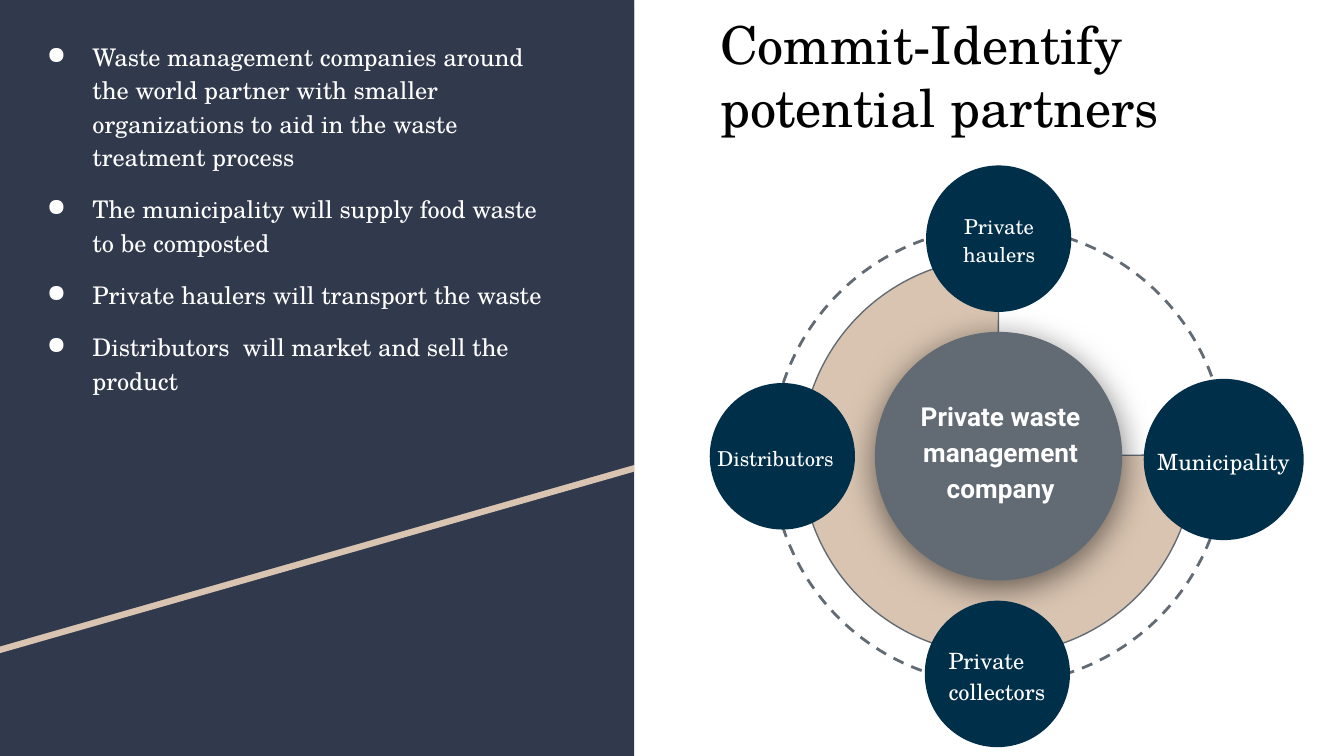
from lxml.etree import SubElement
from pptx import Presentation
from pptx.dml.color import RGBColor
from pptx.enum.dml import MSO_LINE
from pptx.enum.shapes import MSO_SHAPE
from pptx.enum.text import MSO_ANCHOR, PP_ALIGN
from pptx.oxml.ns import qn
from pptx.util import Pt

COLORS = {
    "panel": "31394D",
    "sand": "D9C4B1",
    "gray": "626B73",
    "navy": "002F4A",
    "white": "FFFFFF",
    "black": "000000",
}
SERIF = "TeX Gyre Schola"
SANS = "Roboto"


def rgb(name):
    return RGBColor.from_string(COLORS[name])


def add_text(tf, text, first=True, size=12, font=SERIF, color="white", bold=False,
             align=PP_ALIGN.LEFT, spacing=1.15, before=0, after=0, bullet=None):
    p = tf.paragraphs[0] if first else tf.add_paragraph()
    p.alignment = align
    p.line_spacing = spacing
    p.space_before, p.space_after = Pt(before), Pt(after)
    if bullet:
        pPr = p._p.get_or_add_pPr()
        pPr.set("marL", str(Pt(36)))
        pPr.set("indent", str(Pt(-24.5)))
        clr = SubElement(pPr, qn("a:buClr"))
        SubElement(clr, qn("a:srgbClr"), val=COLORS[color])
        SubElement(pPr, qn("a:buChar"), char=bullet)
    r = p.add_run()
    r.text = text
    r.font.size, r.font.name, r.font.bold = Pt(size), font, bold
    r.font.color.rgb = rgb(color)


class Deck:
    def __init__(self, width, height):
        self.prs = Presentation()
        self.prs.slide_width, self.prs.slide_height = Pt(width), Pt(height)
        self.s = self.prs.slides.add_slide(self.prs.slide_layouts[6])

    def style(self, sp, fill=None, line=None, width=0.75):
        sp.shadow.inherit = False
        if fill:
            sp.fill.solid()
            sp.fill.fore_color.rgb = rgb(fill)
        else:
            sp.fill.background()
        if line:
            sp.line.color.rgb = rgb(line)
            sp.line.width = Pt(width)
        else:
            sp.line.fill.background()
        return sp

    def shape(self, kind, x, y, w, h, **style):
        sp = self.s.shapes.add_shape(kind, Pt(x), Pt(y), Pt(w), Pt(h))
        return self.style(sp, **style)

    def polygon(self, points, **style):
        pts = [(Pt(x), Pt(y)) for x, y in points]
        fb = self.s.shapes.build_freeform(*pts[0], scale=1.0)
        fb.add_line_segments(pts[1:], close=True)
        return self.style(fb.convert_to_shape(), **style)

    def text(self, x, y, w, h, anchor=MSO_ANCHOR.MIDDLE):
        tf = self.s.shapes.add_textbox(Pt(x), Pt(y), Pt(w), Pt(h)).text_frame
        tf.word_wrap = True
        tf.vertical_anchor = anchor
        tf.margin_left = tf.margin_right = Pt(7.2)
        tf.margin_top = tf.margin_bottom = Pt(7.2)
        return tf

    def soft_shadow(self, sp, blur, dist, alpha):
        effects = sp._element.spPr.find(qn("a:effectLst"))
        shadow = SubElement(effects, qn("a:outerShdw"), blurRad=str(Pt(blur)),
                            dist=str(Pt(dist)), dir="5400000", algn="bl", rotWithShape="0")
        clr = SubElement(shadow, qn("a:srgbClr"), val=COLORS["black"])
        SubElement(clr, qn("a:alpha"), val=str(alpha * 1000))

    def partner(self, label, circle, box, size, align=PP_ALIGN.CENTER):
        self.shape(MSO_SHAPE.OVAL, *circle, fill="navy")
        add_text(self.text(*box), label, size=size, align=align)


def main():
    d = Deck(720, 405)

    d.shape(MSO_SHAPE.RECTANGLE, 0, 0, 339.7, 405, fill="panel")
    for top, color in ((3.6, "sand"), (0, "panel")):
        d.polygon([(0, top), (339.7, top), (339.7, top + 249.1), (0, top + 346.3)], fill=color)

    add_text(d.text(378.7, -0.6, 302.4, 85, MSO_ANCHOR.TOP),
             "Commit-Identify potential partners", size=28, color="black", spacing=1)

    bullets = [
        "Waste management companies around the world partner with smaller "
        "organizations to aid in the waste treatment process",
        "The municipality will supply food waste to be composted",
        "Private haulers will transport the waste",
        "Distributors  will market and sell the product",
    ]
    body = d.text(6.5, 13, 302.4, 341.3, MSO_ANCHOR.TOP)
    for i, item in enumerate(bullets):
        add_text(body, item, first=i == 0, size=13, bullet="●", before=10 if i else 0,
                 after=10 if item == bullets[-1] else 0)

    ring = d.shape(MSO_SHAPE.OVAL, 412.6, 122.4, 244.8, 243.4, line="gray", width=1.5)
    ring.line.dash_style = MSO_LINE.DASH
    ring.rotation = 270
    pie = d.shape(MSO_SHAPE.PIE, 429.1, 138.2, 211, 212.4, fill="sand", line="gray")
    pie.adjustments[0], pie.adjustments[1] = 215.77, 162.15

    hub = d.shape(MSO_SHAPE.OVAL, 468.7, 177.8, 132.5, 133.2, fill="gray")
    d.soft_shadow(hub, blur=18, dist=4, alpha=55)
    add_text(d.text(478.1, 189.4, 115.9, 103), "Private waste management company",
             size=14, font=SANS, bold=True, align=PP_ALIGN.CENTER)

    d.partner("Private haulers", (496.1, 88.6, 77.8, 78.5), (507.6, 100.8, 55.4, 54), 11)
    d.partner("Private collectors", (495.4, 321.8, 77.8, 78.5), (501.1, 334.1, 74.9, 54), 12,
              PP_ALIGN.LEFT)
    d.partner("Distributors", (380.2, 205.2, 77.8, 78.5), (373, 217.4, 85, 54), 11)
    d.partner("Municipality", (612.7, 203, 85.7, 86.4), (606.2, 216.7, 98.6, 59), 12)

    d.prs.save("out.pptx")


if __name__ == "__main__":
    main()
